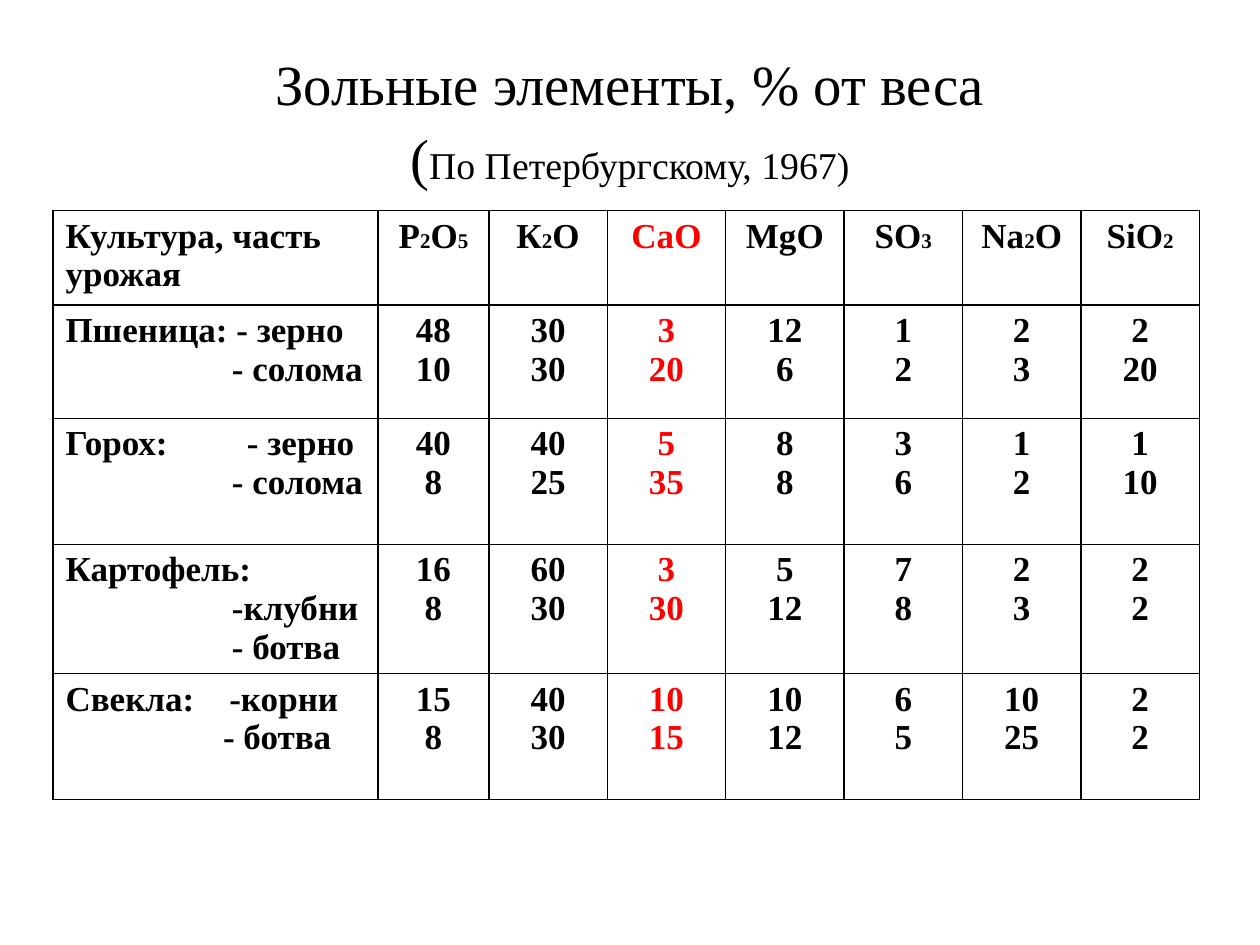
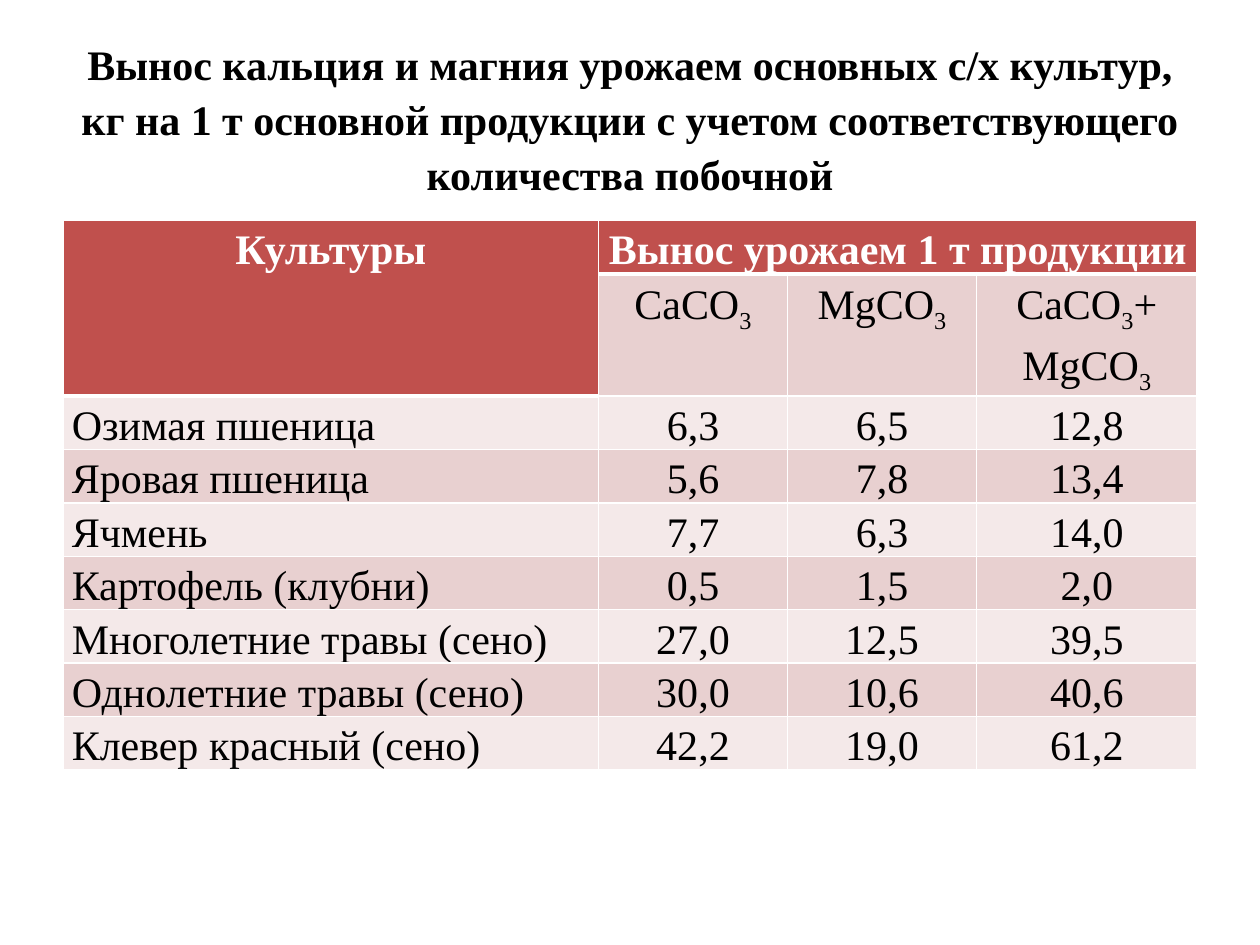
from pptx import Presentation
from pptx import util as u
from pptx.dml.color import RGBColor
from pptx.enum import text as t
from pptx.oxml import parse_xml
from pptx.oxml import ns

FONT = "Times New Roman"
HUES = {"ink": "000000", "hot": "FF0000", "white": "FFFFFF",
        "head": "C0504D", "dark": "E8D0D0", "pale": "F4E9E9"}
MID, LEFT = t.PP_ALIGN.CENTER, t.PP_ALIGN.LEFT


class Deck:
    def __init__(self):
        self.prs = Presentation()
        self.prs.slide_width = u.Inches(10)
        self.prs.slide_height = u.Inches(7.5)
        self.slide = None

    def run(self, para, words, size, hue="ink", bold=False, base=0):
        run = para.add_run()
        run.text = words
        look = {"name": FONT, "size": u.Pt(size), "bold": bold}
        for key, val in look.items():
            setattr(run.font, key, val)
        run.font.color.rgb = RGBColor.from_string(HUES[hue])
        if base:
            run.font._element.set("baseline", str(base * 1000))

    def page(self, parts, bold=False):
        """Add a slide; each title part is (words, size), None is a line break."""
        self.slide = self.prs.slides.add_slide(self.prs.slide_layouts[5])
        box = self.slide.shapes.title
        spot = {"left": 0.5, "top": 0.3, "width": 9, "height": 1.25}
        for key, val in spot.items():
            setattr(box, key, u.Inches(val))
        frame = box.text_frame
        look = {"word_wrap": True, "auto_size": t.MSO_AUTO_SIZE.NONE,
                "vertical_anchor": t.MSO_ANCHOR.MIDDLE}
        for key, val in look.items():
            setattr(frame, key, val)
        para = frame.paragraphs[0]
        para.alignment, para.line_spacing = MID, 1.09
        for part in parts:
            if part is None:
                para.add_line_break()
            else:
                self.run(para, *part, bold=bold)

    def table(self, left, top, cols, rows):
        size = [u.Inches(n) for n in (left, top, sum(cols), sum(rows))]
        grid = self.slide.shapes.add_table(len(rows), len(cols), *size).table
        grid.first_row = grid.horz_banding = False
        for col, wide in zip(grid.columns, cols):
            col.width = u.Inches(wide)
        for row, high in zip(grid.rows, rows):
            row.height = u.Inches(high)
        return grid

    def edge(self, cell, hue, base=1):
        """Draw the four borders, 1 pt wide except for the bottom one."""
        props = cell._tc.get_or_add_tcPr()
        for n, (side, wide) in enumerate(zip("LRTB", (1, 1, 1, base))):
            props.insert(n, parse_xml(
                f'<a:ln{side} {ns.nsdecls("a")} w="{u.Pt(wide)}"><a:solidFill>'
                f'<a:srgbClr val="{HUES[hue]}"/></a:solidFill></a:ln{side}>'))

    def cell(self, cell, lines, size, align, hue="ink", bold=False, fill=None,
             line="ink", base=1, pad=None, lead=None, sub=None):
        """Fill a cell; a line is (words, indent), and ~ lowers the next letter."""
        if fill:
            cell.fill.solid()
            cell.fill.fore_color.rgb = RGBColor.from_string(HUES[fill])
        else:
            cell.fill.background()
        for side, gap in (pad or {}).items():
            setattr(cell, "margin_" + side, u.Inches(gap))
        self.edge(cell, line, base)
        frame = cell.text_frame
        for n, (words, dent) in enumerate(lines):
            para = frame.add_paragraph() if n else frame.paragraphs[0]
            para.alignment, para.line_spacing = align, lead
            if dent:
                self.dent(para, words, dent)
            first, *rest = words.split("~")
            self.run(para, first, size, hue, bold)
            for bit in rest:
                self.run(para, bit[0], hue=hue, bold=bold, **sub)
                if bit[1:]:
                    self.run(para, bit[1:], size, hue, bold)

    def dent(self, para, words, dent):
        """Set a tab stop for a line with a tab, else a left indent."""
        props, pos = para._p.get_or_add_pPr(), u.Inches(dent)
        if "\t" in words:
            props.append(parse_xml(f'<a:tabLst {ns.nsdecls("a")}>'
                                   f'<a:tab pos="{pos}" algn="l"/></a:tabLst>'))
        else:
            props.set("marL", str(pos))


def flat(words):
    return [(line, 0) for line in words.split("\n")]


def ash(deck):
    """Ash elements by crop and plant part."""
    deck.page([("Зольные элементы, % от веса", 32.4), None, ("(", 32.4),
               ("По Петербургскому, 1967)", 21.6)])
    heads = ["Р~2О~5", "К~2О", "СаО", "MgО", "SO~3", "Na~2O", "SiO~2"]
    straw = ("- солома", 1.32)
    crops = [
        ([("Пшеница: - зерно", 0), straw],
         "48 30 3 12 1 2 2", "10 30 20 6 2 3 20"),
        ([("Горох:\t- зерно", 1.44), straw],
         "40 40 5 8 3 1 1", "8 25 35 8 6 2 10"),
        ([("Картофель:", 0), ("-клубни", 1.32), ("- ботва", 1.32)],
         "16 60 3 5 7 2 2", "8 30 30 12 8 3 2"),
        ([("Свекла:\t-корни", 1.3), ("- ботва", 1.25)],
         "15 40 10 10 6 10 2", "8 30 15 12 5 25 2"),
    ]
    rows = [[flat("Культура, часть урожая"), *map(flat, heads)]]
    for name, main, side in crops:
        pairs = zip(main.split(), side.split())
        rows.append([name, *(flat("\n".join(pair)) for pair in pairs)])
    grid = deck.table(0.42, 1.67, [2.58, 0.88] + [0.94] * 6, [0.75, 0.9, 1, 1, 1])
    for r, row in enumerate(rows):
        for c, lines in enumerate(row):
            deck.cell(grid.cell(r, c), lines, 20, MID if c else LEFT,
                      "hot" if c == 3 else "ink", True, sub={"size": 12})


def loss(deck):
    """Calcium and magnesium taken up by the harvest."""
    deck.page([("Вынос кальция и магния урожаем основных с/х культур, "
                "кг на 1 т основной продукции с учетом "
                "соответствующего количества побочной", 24)], bold=True)
    rows = [
        ["Культуры", "Вынос урожаем 1 т продукции", "", ""],
        ["", "СаСО~3", "MgСО~3", "СаСО~3+ MgСО~3"],
        ["Озимая пшеница", "6,3", "6,5", "12,8"],
        ["Яровая пшеница", "5,6", "7,8", "13,4"],
        ["Ячмень", "7,7", "6,3", "14,0"],
        ["Картофель (клубни)", "0,5", "1,5", "2,0"],
        ["Многолетние травы (сено)", "27,0", "12,5", "39,5"],
        ["Однолетние травы (сено)", "30,0", "10,6", "40,6"],
        ["Клевер красный (сено)", "42,2", "19,0", "61,2"],
    ]
    grid = deck.table(0.5, 1.75, [4.25, 1.5, 1.5, 1.75], [0.41] * len(rows))
    grid.cell(0, 0).merge(grid.cell(1, 0))
    grid.cell(0, 1).merge(grid.cell(0, 3))
    look = {"pad": {"left": 0.07, "right": 0.07, "top": 0, "bottom": 0},
            "lead": 1.15, "line": "white", "sub": {"size": 24, "base": -25}}
    for r, row in enumerate(rows):
        for c, words in enumerate(row):
            head = r == 0 or (r == 1 and c == 0)
            if head:
                tone = {"hue": "white", "bold": True, "fill": "head", "base": 3}
            else:
                tone = {"fill": "dark" if r % 2 else "pale"}
            lines = flat(words) if words else []
            deck.cell(grid.cell(r, c), lines, 24, MID if c or head else LEFT,
                      **tone, **look)


def main():
    deck = Deck()
    ash(deck)
    loss(deck)
    deck.prs.save("out.pptx")


if __name__ == "__main__":
    main()
